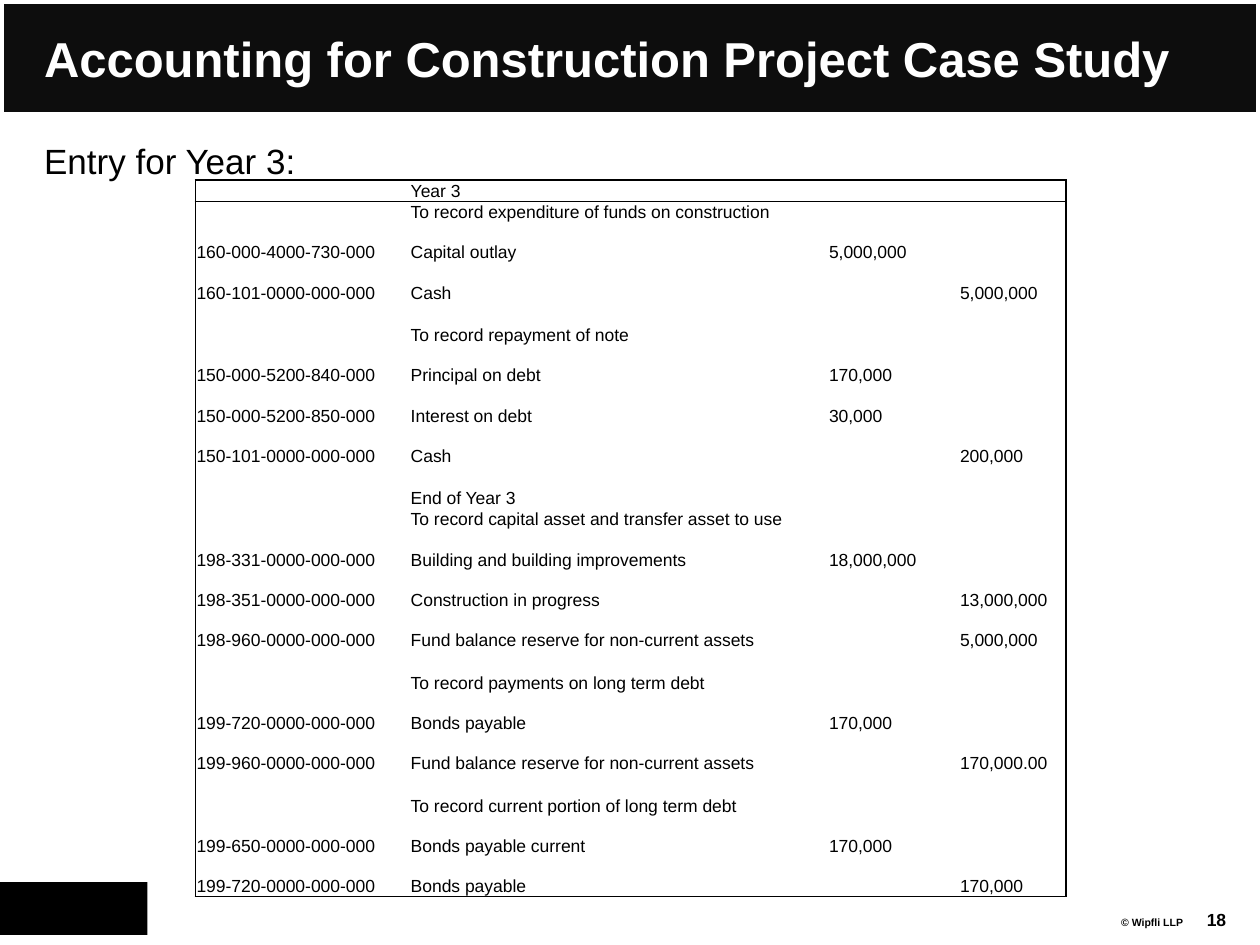
from dataclasses import dataclass

from lxml.etree import SubElement
from pptx import Presentation
from pptx.dml.color import RGBColor
from pptx.enum.shapes import MSO_SHAPE
from pptx.enum.text import MSO_ANCHOR, PP_ALIGN
from pptx.oxml.ns import qn
from pptx.util import Inches, Pt


@dataclass(frozen=True)
class Theme:
    font: str = "Arial"
    black: str = "000000"
    white: str = "FFFFFF"
    band: str = "0D0D0D"
    title: int = 28
    body: int = 20
    table: int = 10
    number: int = 10
    footer: int = 6
    border: int = 1


BLANK = ("", "", "", "")


def heading(text):
    return ("", text, "", "")


LEDGER = [
    heading("Year 3"),
    heading("To record expenditure of funds on construction"),
    ("160-000-4000-730-000", "Capital outlay", "5,000,000", ""),
    ("160-101-0000-000-000", "Cash", "", "5,000,000"),
    BLANK,
    heading("To record repayment of note"),
    ("150-000-5200-840-000", "Principal on debt", "170,000", ""),
    ("150-000-5200-850-000", "Interest on debt", "30,000", ""),
    ("150-101-0000-000-000", "Cash", "", "200,000"),
    BLANK,
    heading("End of Year 3"),
    heading("To record capital asset and transfer asset to use"),
    ("198-331-0000-000-000", "Building and building improvements", "18,000,000", ""),
    ("198-351-0000-000-000", "Construction in progress", "", "13,000,000"),
    ("198-960-0000-000-000", "Fund balance reserve for non-current assets", "", "5,000,000"),
    BLANK,
    heading("To record payments on long term debt"),
    ("199-720-0000-000-000", "Bonds payable", "170,000", ""),
    ("199-960-0000-000-000", "Fund balance reserve for non-current assets", "", "170,000.00"),
    BLANK,
    heading("To record current portion of long term debt"),
    ("199-650-0000-000-000", "Bonds payable current", "170,000", ""),
    ("199-720-0000-000-000", "Bonds payable", "", "170,000"),
]


def row_height(row):
    if row[0]:
        return 0.32
    return 0.16 if row[1] else 0.17


class SlideBuilder:
    def __init__(self, prs, theme):
        self.theme = theme
        self.s = prs.slides.add_slide(prs.slide_layouts[1])

    def place(self, sp, box):
        sp.left, sp.top, sp.width, sp.height = [Inches(v) for v in box]

    def run(self, p, text, size, color, bold=False):
        r = p.add_run()
        r.text = text
        r.font.name = self.theme.font
        r.font.size = Pt(size)
        r.font.bold = bold
        r.font.color.rgb = RGBColor.from_string(color)

    def rect(self, box, fill, line=None, weight=0):
        sp = self.s.shapes.add_shape(MSO_SHAPE.RECTANGLE, *[Inches(v) for v in box])
        sp.shadow.inherit = False
        sp.fill.solid()
        sp.fill.fore_color.rgb = RGBColor.from_string(fill)
        if line:
            sp.line.color.rgb = RGBColor.from_string(line)
            sp.line.width = Pt(weight)
        else:
            sp.line.fill.background()
        sp.element.getparent().insert(2, sp.element)

    def title(self, text, box):
        sp = self.s.shapes.title
        self.place(sp, box)
        sp.text_frame.vertical_anchor = MSO_ANCHOR.MIDDLE
        p = sp.text_frame.paragraphs[0]
        p.alignment = PP_ALIGN.LEFT
        self.run(p, text, self.theme.title, self.theme.white, True)

    def body(self, text, box):
        sp = self.s.placeholders[1]
        self.place(sp, box)
        p = sp.text_frame.paragraphs[0]
        p.line_spacing = 0.95
        p.space_before = Pt(0)
        p.space_after = Pt(8)
        pPr = p._p.get_or_add_pPr()
        pPr.set("marL", "0")
        pPr.set("indent", "0")
        SubElement(pPr, qn("a:buNone"))
        self.run(p, text, self.theme.body, self.theme.black)

    def text(self, text, box, size, align, anchor):
        sp = self.s.shapes.add_textbox(*[Inches(v) for v in box])
        tf = sp.text_frame
        tf.word_wrap = True
        tf.vertical_anchor = anchor
        p = tf.paragraphs[0]
        p.alignment = align
        self.run(p, text, size, self.theme.black, True)

    def borders(self, cell, sides):
        tcPr = cell._tc.get_or_add_tcPr()
        for side in "LRTB":
            ln = SubElement(tcPr, qn(f"a:ln{side}"), w=str(Pt(self.theme.border)))
            if side in sides:
                fill = SubElement(ln, qn("a:solidFill"))
                SubElement(fill, qn("a:srgbClr"), val=self.theme.black)
            else:
                SubElement(ln, qn("a:noFill"))

    def cell(self, cell, text, sides):
        cell.margin_left = cell.margin_right = Inches(0.01)
        cell.margin_top = cell.margin_bottom = 0
        cell.vertical_anchor = MSO_ANCHOR.BOTTOM
        self.borders(cell, sides)
        cell.fill.background()
        p = cell.text_frame.paragraphs[0]
        if text:
            self.run(p, text, self.theme.table, self.theme.black)
        else:
            SubElement(p._p, qn("a:endParaRPr"), sz=str(self.theme.table * 100))

    def table(self, rows, widths, left, top):
        heights = [row_height(row) for row in rows]
        box = (left, top, sum(widths), sum(heights))
        frame = self.s.shapes.add_table(len(rows), len(widths), *[Inches(v) for v in box])
        table = frame.table
        table.first_row = table.horz_banding = False
        for column, width in zip(table.columns, widths):
            column.width = Inches(width)
        last_row, last_col = len(rows) - 1, len(widths) - 1
        for i, row in enumerate(rows):
            table.rows[i].height = Inches(heights[i])
            for j, text in enumerate(row):
                edges = {"L": j == 0, "R": j == last_col, "T": i < 2, "B": i in (0, last_row)}
                self.cell(table.cell(i, j), text, [e for e, on in edges.items() if on])


def main():
    prs = Presentation()
    prs.slide_width, prs.slide_height = Inches(10), Inches(7.5)
    theme = Theme()
    b = SlideBuilder(prs, theme)
    b.rect((0, 7, 1.17, 0.42), theme.black)
    b.rect((0, 0, 10, 0.92), theme.band, theme.white, 4.5)
    b.title("Accounting for Construction Project Case Study", (0.25, 0.17, 9.5, 0.58))
    b.body("Entry for Year 3:", (0.25, 1.08, 9.5, 5.42))
    b.text("© Wipfli LLP", (8.8, 7.22, 0.7, 0.2), theme.footer, PP_ALIGN.LEFT, MSO_ANCHOR.TOP)
    b.text("18", (9.33, 7.17, 0.5, 0.25), theme.number, PP_ALIGN.RIGHT, MSO_ANCHOR.MIDDLE)
    b.table(LEDGER, (1.7, 3.32, 1.04, 0.85), 1.55, 1.43)
    prs.save("out.pptx")


if __name__ == "__main__":
    main()
